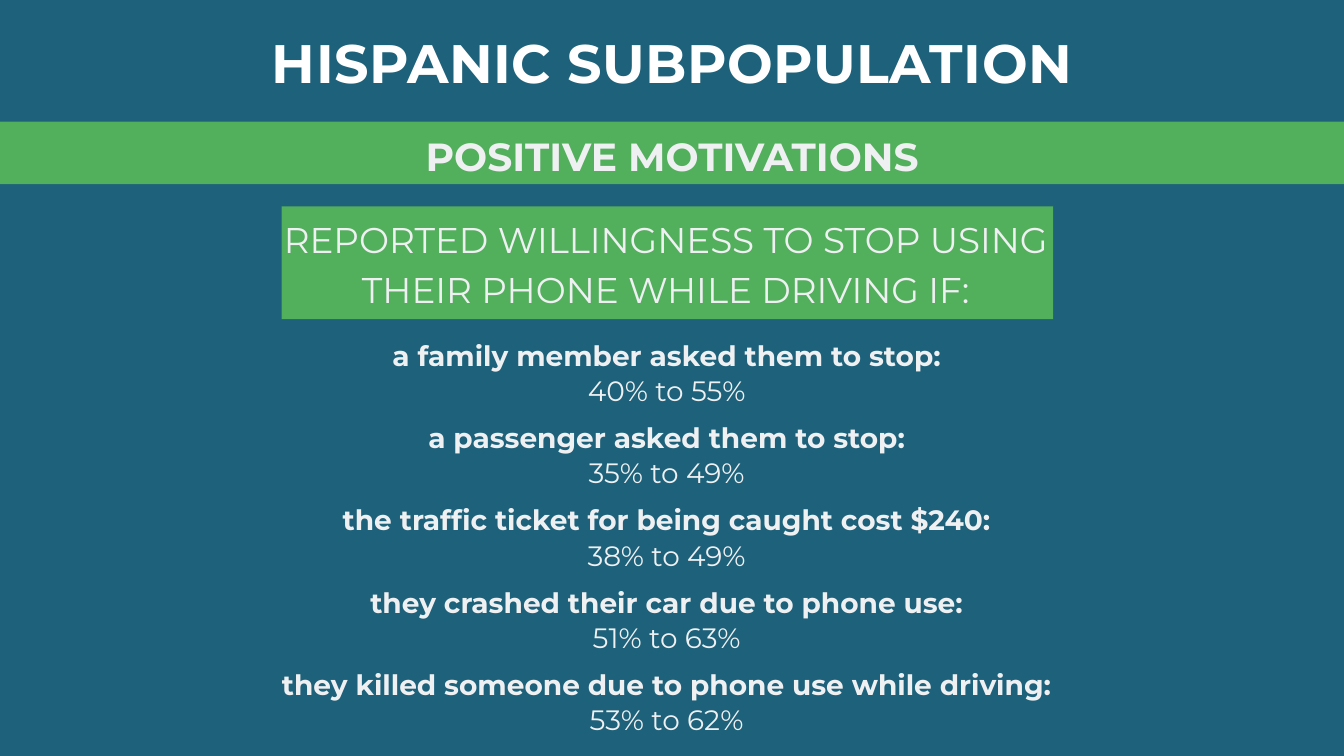
from dataclasses import dataclass

from pptx import Presentation
from pptx.dml.color import RGBColor
from pptx.enum.shapes import MSO_SHAPE
from pptx.enum.text import PP_ALIGN
from pptx.util import Pt


@dataclass(frozen=True)
class Theme:
    font: str = "Montserrat"
    background: RGBColor = RGBColor(0x1D, 0x61, 0x7A)
    band: RGBColor = RGBColor(0x52, 0xAF, 0x5C)
    title_color: RGBColor = RGBColor(0xFF, 0xFF, 0xFF)
    text_color: RGBColor = RGBColor(0xEF, 0xF0, 0xF2)
    title_size: float = 58
    section_size: float = 42
    question_size: float = 38.3
    body_size: float = 30


THEME = Theme()

MOTIVATIONS = [
    ("a family member asked them to stop:", "40% to 55%"),
    ("a passenger asked them to stop:", "35% to 49%"),
    ("the traffic ticket for being caught cost $240:", "38% to 49%"),
    ("they crashed their car due to phone use:", "51% to 63%"),
    ("they killed someone due to phone use while driving:", "53% to 62%"),
]


def add_text_frame(slide, left, top, width, height):
    box = slide.shapes.add_textbox(Pt(left), Pt(top), Pt(width), Pt(height))
    frame = box.text_frame
    frame.word_wrap = True
    frame.margin_left = frame.margin_top = 0
    frame.margin_right = frame.margin_bottom = 0
    return frame


def add_line(frame, text, size, leading, bold=False, color=THEME.text_color, before=0):
    """Fill the frame's empty first paragraph, or append a new one."""
    first = frame.paragraphs[0]
    line = frame.add_paragraph() if first.runs else first
    line.alignment = PP_ALIGN.CENTER
    line.line_spacing = Pt(leading)
    if before:
        line.space_before = Pt(before)
    line.add_run().text = text
    line.font.name = THEME.font
    line.font.size = Pt(size)
    line.font.bold = bold
    line.font.color.rgb = color
    return line


def add_band(slide, left, top, width, height):
    band = slide.shapes.add_shape(
        MSO_SHAPE.RECTANGLE, Pt(left), Pt(top), Pt(width), Pt(height))
    band.shadow.inherit = False
    band.fill.solid()
    band.fill.fore_color.rgb = THEME.band
    band.line.fill.background()


def add_title(slide, left, top, width, height):
    frame = add_text_frame(slide, left, top, width, height)
    title = add_line(frame, "HISPANIC SUBPOPULATION", THEME.title_size, 63.8,
                     bold=True, color=THEME.title_color)
    # Letter spacing, in hundredths of a point
    title.runs[0].font._element.set("spc", "60")


def add_section(slide, left, top, width, height):
    add_band(slide, left, top, width, height)
    frame = add_text_frame(slide, left, top + 2.9, width, height - 11.5)
    add_line(frame, "POSITIVE MOTIVATIONS", THEME.section_size, 58.8, bold=True)


def add_question(slide, left, top, width, height):
    add_band(slide, left, top, width, height)
    # The text box is wider than the band, so that the first line fits
    frame = add_text_frame(slide, left - 19.4, top + 5, width + 35.3, height - 12)
    for text in ("REPORTED WILLINGNESS TO STOP USING",
                 "THEIR PHONE WHILE DRIVING IF:"):
        add_line(frame, text, THEME.question_size, 53.6)


def add_motivations(slide, left, top, width, height):
    frame = add_text_frame(slide, left, top, width, height)
    for index, (motivation, change) in enumerate(MOTIVATIONS):
        add_line(frame, motivation, THEME.body_size, 37.8, bold=True,
                 before=12.6 if index else 0)
        add_line(frame, change, THEME.body_size, 37.8)


def main():
    deck = Presentation()
    deck.slide_width, deck.slide_height = Pt(1440), Pt(810)
    slide = deck.slides.add_slide(deck.slide_layouts[6])
    slide.background.fill.solid()
    slide.background.fill.fore_color.rgb = THEME.background

    add_title(slide, 277.9, 37.4, 884.9, 64)
    add_question(slide, 301.7, 221, 826.6, 121)
    add_section(slide, 0, 130.3, 1440, 67)
    add_motivations(slide, 293.8, 360.7, 841, 436.3)

    deck.save("out.pptx")


if __name__ == "__main__":
    main()
